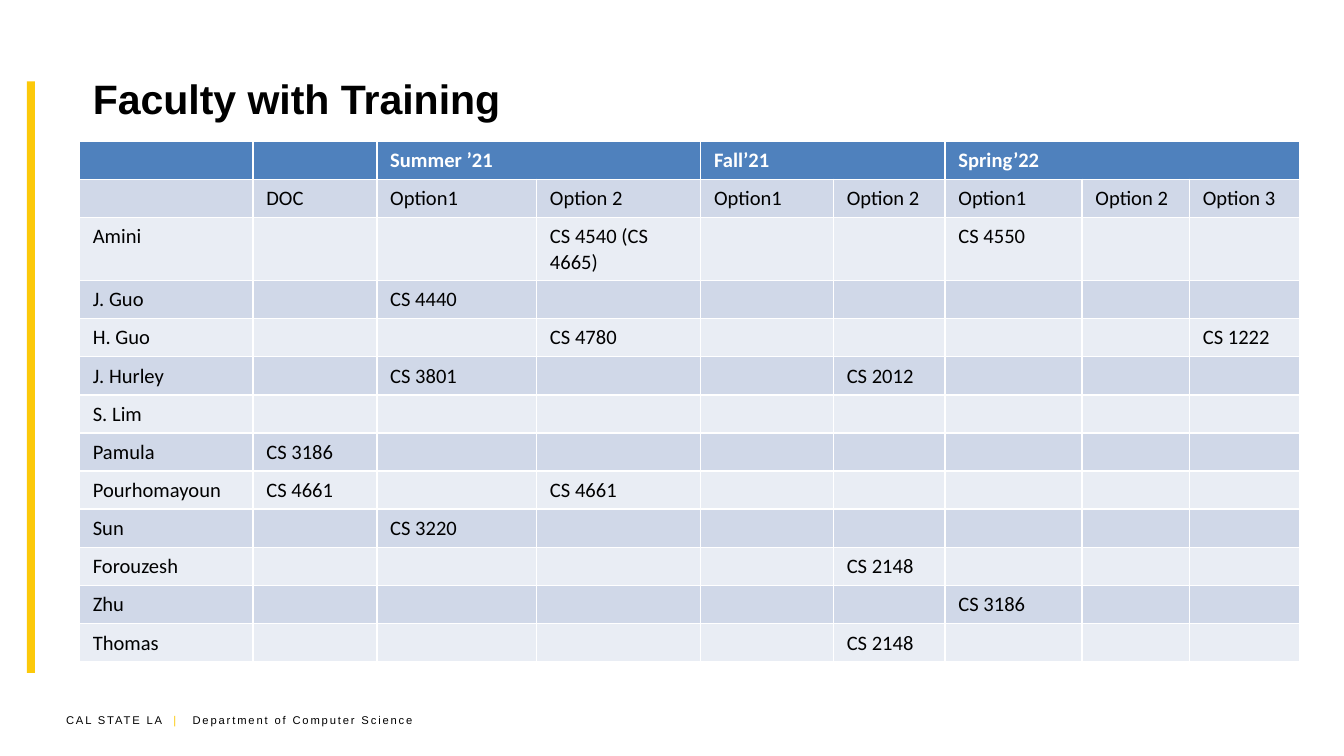
"""Build the slide listing faculty with training and their course options."""
from lxml import etree
from pptx import Presentation
from pptx import util as u
from pptx.dml.color import RGBColor
from pptx.enum import shapes, text
from pptx.oxml import ns

BLACK = RGBColor(0x00, 0x00, 0x00)
WHITE = RGBColor(0xFF, 0xFF, 0xFF)
GOLD = RGBColor(0xFC, 0xC9, 0x0A)
BLUE = RGBColor(0x4F, 0x81, 0xBD)
BANDS = (RGBColor(0xD0, 0xD8, 0xE8), RGBColor(0xE9, 0xED, 0xF4))

TITLE = "Faculty with Training"
FOOTER = [("CAL STATE LA ", BLACK), (" |\t", GOLD),
          ("Department of Computer Science", BLACK)]
TERMS = [("Summer ’21", 2, 3), ("Fall’21", 4, 5), ("Spring’22", 6, 8)]
OPTIONS = ["", "DOC", "Option1", "Option 2", "Option1", "Option 2",
           "Option1", "Option 2", "Option 3"]
FACULTY = [
    ("Amini", {3: "CS 4540 (CS 4665)", 6: "CS 4550"}),
    ("J. Guo", {2: "CS 4440"}),
    ("H. Guo", {3: "CS 4780", 8: "CS 1222"}),
    ("J. Hurley", {2: "CS 3801", 5: "CS 2012"}),
    ("S. Lim", {}),
    ("Pamula", {1: "CS 3186"}),
    ("Pourhomayoun", {1: "CS 4661", 3: "CS 4661"}),
    ("Sun", {2: "CS 3220"}),
    ("Forouzesh", {5: "CS 2148"}),
    ("Zhu", {6: "CS 3186"}),
    ("Thomas", {5: "CS 2148"}),
]
COLUMN_WIDTHS = [3.28, 2.34, 3.02, 3.1, 2.51, 2.11, 2.59, 2.03, 2.08]
ROW_HEIGHT, TALL_ROW_HEIGHT, TALL_ROW = 0.61, 1.02, 2

TITLE_FORMAT = {"name": "Arial", "size": u.Pt(22), "bold": True}
FOOTER_FORMAT = {"name": "Arial", "size": u.Pt(6)}
HEADER_FORMAT = {"name": "Calibri", "size": u.Pt(11), "bold": True}
BODY_FORMAT = {**HEADER_FORMAT, "bold": False}


def add_run(paragraph, words, values, color):
    run = paragraph.add_run()
    run.text = words
    for name, value in values.items():
        setattr(run.font, name, value)
    run.font.color.rgb = color
    return run


def add_title(slide):
    title = slide.shapes.title
    title.left, title.top = u.Cm(1.5), u.Cm(0.66)
    title.width, title.height = u.Cm(22.61), u.Cm(2.39)
    title.text_frame.vertical_anchor = text.MSO_ANCHOR.MIDDLE
    title.text_frame.auto_size = text.MSO_AUTO_SIZE.NONE
    paragraph = title.text_frame.paragraphs[0]
    paragraph.alignment = text.PP_ALIGN.LEFT
    add_run(paragraph, TITLE, TITLE_FORMAT, BLACK)


def add_footer(slide):
    footer = slide.shapes.add_textbox(u.Cm(1), u.Cm(13.36), u.Cm(7.42), u.Cm(0.51))
    footer.text_frame.word_wrap = True
    paragraph = footer.text_frame.paragraphs[0]
    tabs = etree.SubElement(paragraph._p.get_or_add_pPr(), ns.qn("a:tabLst"))
    etree.SubElement(tabs, ns.qn("a:tab"), pos=str(u.Cm(2.39)), algn="l")
    for words, color in FOOTER:
        run = add_run(paragraph, words, FOOTER_FORMAT, color)
        run.font._element.set("spc", "100")


def add_bar(slide):
    bar = slide.shapes.add_shape(shapes.MSO_SHAPE.RECTANGLE, u.Cm(0.51), u.Cm(1.54),
                                 u.Cm(0.15), u.Cm(11.18))
    bar.shadow.inherit = False
    bar.fill.solid()
    bar.fill.fore_color.rgb = GOLD
    bar.line.fill.background()


def add_schedule(slide):
    terms = {first: term for term, first, last in TERMS}
    columns = range(len(COLUMN_WIDTHS))
    rows = [[terms.get(column, "") for column in columns], OPTIONS]
    rows += [[name] + [courses.get(column, "") for column in columns[1:]]
             for name, courses in FACULTY]
    heights = [TALL_ROW_HEIGHT if index == TALL_ROW else ROW_HEIGHT
               for index in range(len(rows))]
    table = slide.shapes.add_table(
        len(rows), len(columns), u.Cm(1.5), u.Cm(2.67),
        u.Cm(sum(COLUMN_WIDTHS)), u.Cm(sum(heights))).table
    for column, width in zip(table.columns, COLUMN_WIDTHS):
        column.width = u.Cm(width)
    for index, (row, entries) in enumerate(zip(table.rows, rows)):
        row.height = u.Cm(heights[index])
        header = index == 0
        for cell, words in zip(row.cells, entries):
            cell.fill.solid()
            cell.fill.fore_color.rgb = BLUE if header else BANDS[(index - 1) % 2]
            paragraph = cell.text_frame.paragraphs[0]
            if words:
                add_run(paragraph, words, HEADER_FORMAT if header else BODY_FORMAT,
                        WHITE if header else BLACK)
            else:
                etree.SubElement(paragraph._p, ns.qn("a:endParaRPr"), sz="1100")
    for term, first, last in TERMS:
        table.cell(0, first).merge(table.cell(0, last))


def main():
    presentation = Presentation()
    presentation.slide_width, presentation.slide_height = u.Cm(25.4), u.Cm(14.29)
    slide = presentation.slides.add_slide(presentation.slide_layouts[5])
    add_footer(slide)
    add_bar(slide)
    add_title(slide)
    add_schedule(slide)
    presentation.save("out.pptx")


if __name__ == "__main__":
    main()
